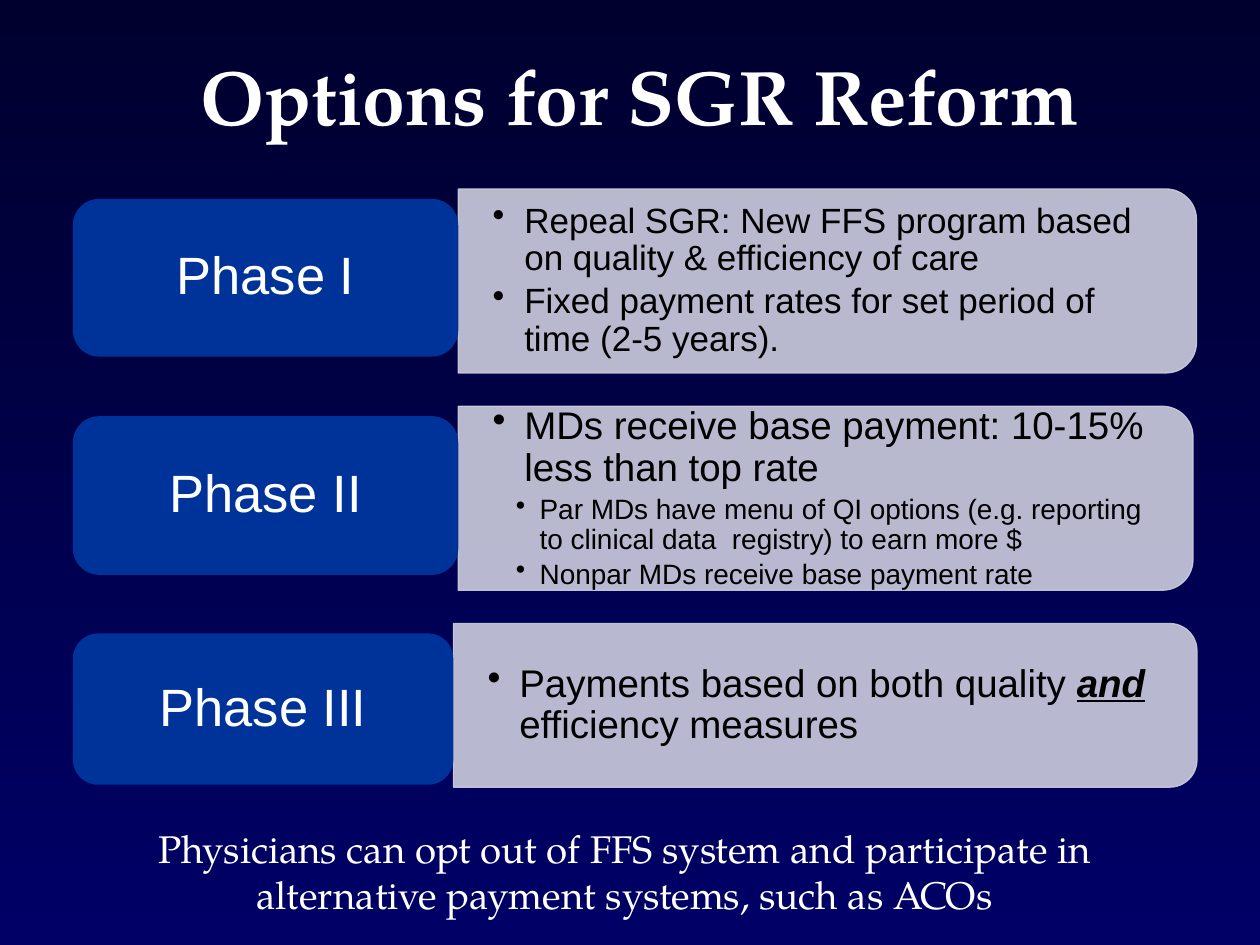
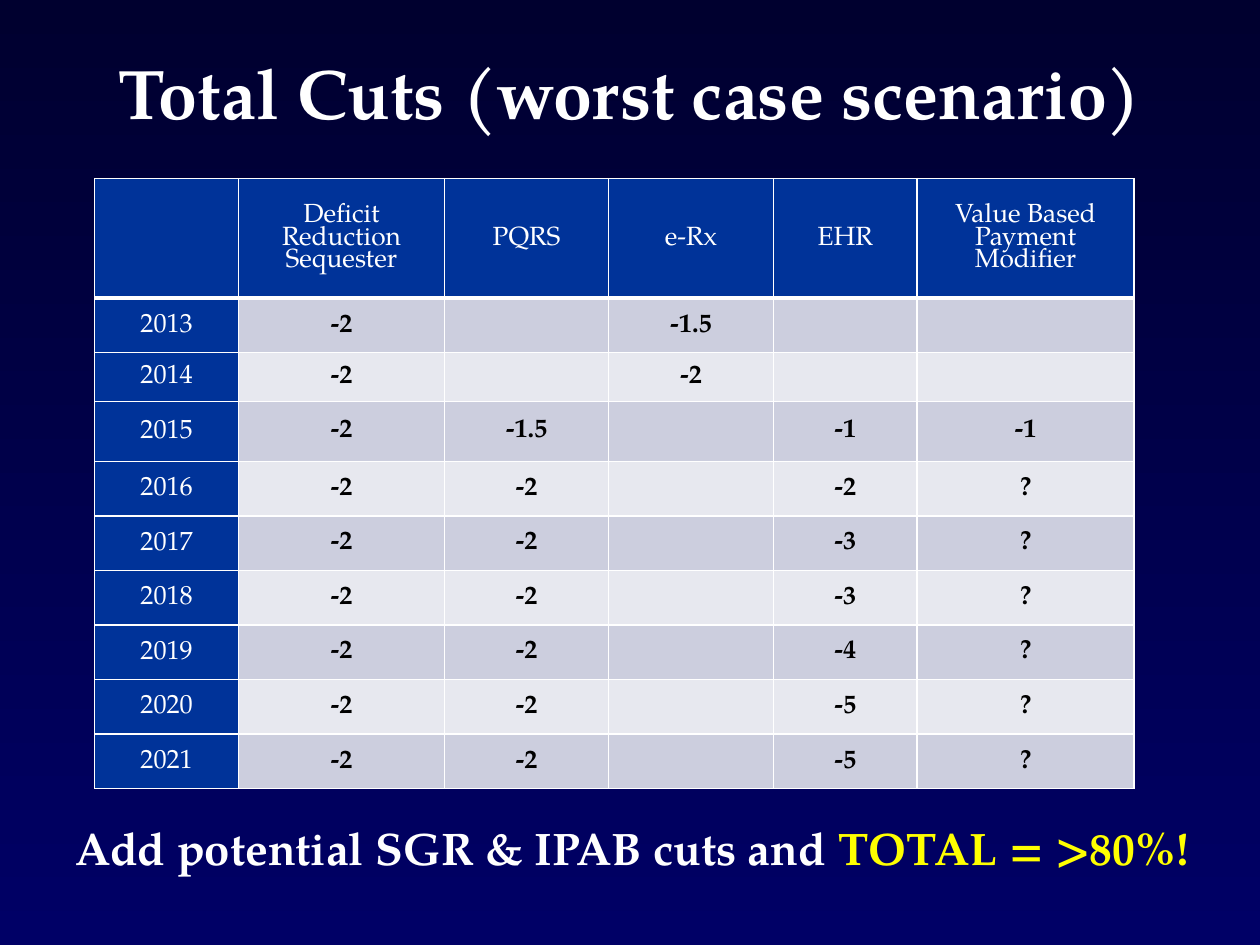
from dataclasses import dataclass

from lxml.etree import SubElement
from pptx import Presentation
from pptx.dml.color import RGBColor
from pptx.enum.shapes import MSO_SHAPE
from pptx.enum.text import MSO_ANCHOR, PP_ALIGN
from pptx.oxml.ns import qn
from pptx.util import Cm, Pt


@dataclass(frozen=True)
class Theme:
    serif: str = "TeX Gyre Pagella"
    sans: str = "Arial"
    white: RGBColor = RGBColor(0xFF, 0xFF, 0xFF)
    black: RGBColor = RGBColor(0, 0, 0)
    yellow: RGBColor = RGBColor(0xFF, 0xFF, 0)
    night: RGBColor = RGBColor(0, 0, 0x2F)
    navy: RGBColor = RGBColor(0, 0, 0x66)
    blue: RGBColor = RGBColor(0, 0x33, 0x99)
    lavender: RGBColor = RGBColor(0xCC, 0xCE, 0xDE)
    pale: RGBColor = RGBColor(0xE7, 0xE8, 0xEF)
    phase_size: int = 30
    note_size: int = 22
    total_size: int = 26
    cell_size: int = 15


theme = Theme()
deck = Presentation()
deck.slide_width, deck.slide_height = Cm(25.4), Cm(19.05)


def write(paragraph, runs, size, font=theme.serif, color=theme.white, align=PP_ALIGN.CENTER):
    """Add runs, each a text with a dict of font values that differ."""
    paragraph.alignment = align
    for text, changes in runs:
        run = paragraph.add_run()
        run.text = text
        values = {"name": font, "size": Pt(size), "color": color, **changes}
        run.font.color.rgb = values.pop("color")
        for key, value in values.items():
            setattr(run.font, key, value)


def start_slide(title, size, left, width, height):
    slide = deck.slides.add_slide(deck.slide_layouts[6])
    fill = slide.background.fill
    fill.gradient()
    fill.gradient_angle = 270
    for stop, color in zip(fill.gradient_stops, (theme.night, theme.navy)):
        stop.color.rgb = color
    frame = slide.shapes.add_textbox(Cm(left), Cm(0.64), Cm(width), Cm(height)).text_frame
    frame.word_wrap = True
    frame.vertical_anchor = MSO_ANCHOR.MIDDLE
    write(frame.paragraphs[0], [(title, {"bold": True})], size)
    return slide


# Slide 1: three phases of reform
reform = start_slide("Options for SGR Reform", 44, 2.11, 21.59, 2.54)
LABEL_LEFT, PHASE_TOP, PHASE_PITCH = 1.47, 3.81, 4.38
BULLET_INDENT = {1: (0.64, -0.64), 2: (0.95, -0.48)}
emphasis = {"bold": True, "italic": True, "underline": True}

# name, label height, details left, width and height, points (level, size, runs)
phases = [
    ("Phase I", 3.18, 9.24, 14.88, 3.71, [
        (1, 20, [("Repeal SGR: New FFS program based on quality & efficiency of care", {})]),
        (1, 20, [("Fixed payment rates for set period of time (2-5 years).", {})]),
    ]),
    ("Phase II", 3.2, 9.24, 14.81, 3.71, [
        (1, 22, [("MDs receive base payment: 10-15% less than top rate", {})]),
        (2, 16, [("Par MDs have menu of QI options (e.g. reporting to clinical data  registry) "
                  "to earn more $", {})]),
        (2, 16, [("Nonpar MDs receive base payment rate", {})]),
    ]),
    ("Phase III", 3.05, 9.14, 14.99, 3.3, [
        (1, 22, [("Payments based on both quality ", {}), ("and", emphasis),
                 (" efficiency measures", {})]),
    ]),
]

for index, (name, label_height, left, width, height, points) in enumerate(phases):
    top = PHASE_TOP + index * PHASE_PITCH

    # Turned a quarter so that the two rounded corners face right
    panel = reform.shapes.add_shape(
        MSO_SHAPE.ROUND_2_SAME_RECTANGLE,
        Cm(left + (width - height) / 2), Cm(top + (height - width) / 2), Cm(height), Cm(width))
    panel.rotation = 90
    panel.shadow.inherit = False
    panel.line.width = Pt(0.75)
    for paint in (panel.fill, panel.line.fill):
        paint.solid()
        paint.fore_color.rgb = theme.lavender
    for color in panel._element.spPr.iter(qn("a:srgbClr")):
        SubElement(color, qn("a:alpha"), val="90000")

    details = reform.shapes.add_textbox(
        Cm(left), Cm(top + 0.18), Cm(width - 0.18), Cm(height - 0.36)).text_frame
    details.word_wrap = True
    details.vertical_anchor = MSO_ANCHOR.MIDDLE
    details.margin_left = details.margin_right = Cm(0.69)
    details.margin_top = details.margin_bottom = Cm(0.36)
    for number, (level, size, runs) in enumerate(points):
        point = details.add_paragraph() if number else details.paragraphs[0]
        write(point, runs, size, theme.sans, theme.black, PP_ALIGN.LEFT)
        point.level = level
        point.line_spacing = 0.9
        point.space_after = Pt(0.15 * size)
        properties = point._p.get_or_add_pPr()
        for key, length in zip(("marL", "indent"), BULLET_INDENT[level]):
            properties.set(key, str(Cm(length)))
        SubElement(properties, qn("a:buChar"), char="•")

    label = reform.shapes.add_shape(
        MSO_SHAPE.ROUNDED_RECTANGLE,
        Cm(LABEL_LEFT), Cm(top + 0.2), Cm(left - LABEL_LEFT), Cm(label_height))
    label.shadow.inherit = False
    label.fill.solid()
    label.fill.fore_color.rgb = theme.blue
    label.line.fill.background()
    label.text_frame.vertical_anchor = MSO_ANCHOR.MIDDLE
    phase_name = label.text_frame.paragraphs[0]
    write(phase_name, [(name, {})], theme.phase_size, theme.sans)
    phase_name.line_spacing = 0.9

opt_out = reform.shapes.add_textbox(Cm(2.11), Cm(16.51), Cm(20.96), Cm(2.13)).text_frame
opt_out.word_wrap = True
write(opt_out.paragraphs[0],
      [("Physicians can opt out of FFS system and participate in alternative payment systems, "
        "such as ACOs", {})], theme.note_size)

# Slide 2: table of cuts by year
cuts = start_slide("Total Cuts (worst case scenario)", 40, 1.27, 22.86, 2.41)
rows = [
    ("", "Deficit Reduction Sequester", "PQRS", "e-Rx", "EHR", "Value Based Payment Modifier"),
    ("2013", "-2", "", "-1.5", "", ""),
    ("2014", "-2", "", "-2", "", ""),
    ("2015", "-2", "-1.5", "", "-1", "-1"),
    ("2016", "-2", "-2", "", "-2", "?"),
    ("2017", "-2", "-2", "", "-3", "?"),
    ("2018", "-2", "-2", "", "-3", "?"),
    ("2019", "-2", "-2", "", "-4", "?"),
    ("2020", "-2", "-2", "", "-5", "?"),
    ("2021", "-2", "-2", "", "-5", "?"),
]
column_widths = [2.9, 4.15, 3.31, 3.32, 2.9, 4.37]
row_heights = [2.41, 1.1, 0.98, 1.21] + [1.1] * 6

yearly = cuts.shapes.add_table(
    len(rows), len(column_widths), Cm(1.91), Cm(3.6),
    Cm(sum(column_widths)), Cm(sum(row_heights))).table
yearly.first_row = yearly.horz_banding = False
for column, width in zip(yearly.columns, column_widths):
    column.width = Cm(width)

for r, (texts, height) in enumerate(zip(rows, row_heights)):
    yearly.rows[r].height = Cm(height)
    for c, text in enumerate(texts):
        cell = yearly.cell(r, c)
        heading = r == 0 or c == 0
        cell.vertical_anchor = MSO_ANCHOR.MIDDLE
        cell.margin_left = cell.margin_right = Cm(0.18)
        cell.margin_top = cell.margin_bottom = 0
        for side in "LRTB":
            weight = Pt(3 if r == 0 and side == "B" else 1)
            border = SubElement(cell._tc.get_or_add_tcPr(), qn(f"a:ln{side}"), w=str(weight))
            SubElement(SubElement(border, qn("a:solidFill")), qn("a:srgbClr"),
                       val=str(theme.white))
        cell.fill.solid()
        band = theme.lavender if r % 2 else theme.pale
        cell.fill.fore_color.rgb = theme.blue if heading else band
        if text:
            entry = cell.text_frame.paragraphs[0]
            write(entry, [(text, {"bold": not heading})], theme.cell_size,
                  color=theme.white if heading else theme.black)
            entry.line_spacing = 0.86

total = cuts.shapes.add_textbox(Cm(1.27), Cm(16.41), Cm(23.29), Cm(1.37)).text_frame
total.word_wrap = True
write(total.paragraphs[0],
      [("Add potential SGR & IPAB cuts and ", {"bold": True}),
       ("TOTAL = >80%!", {"bold": True, "color": theme.yellow})],
      theme.total_size, align=PP_ALIGN.LEFT)

deck.save("out.pptx")
